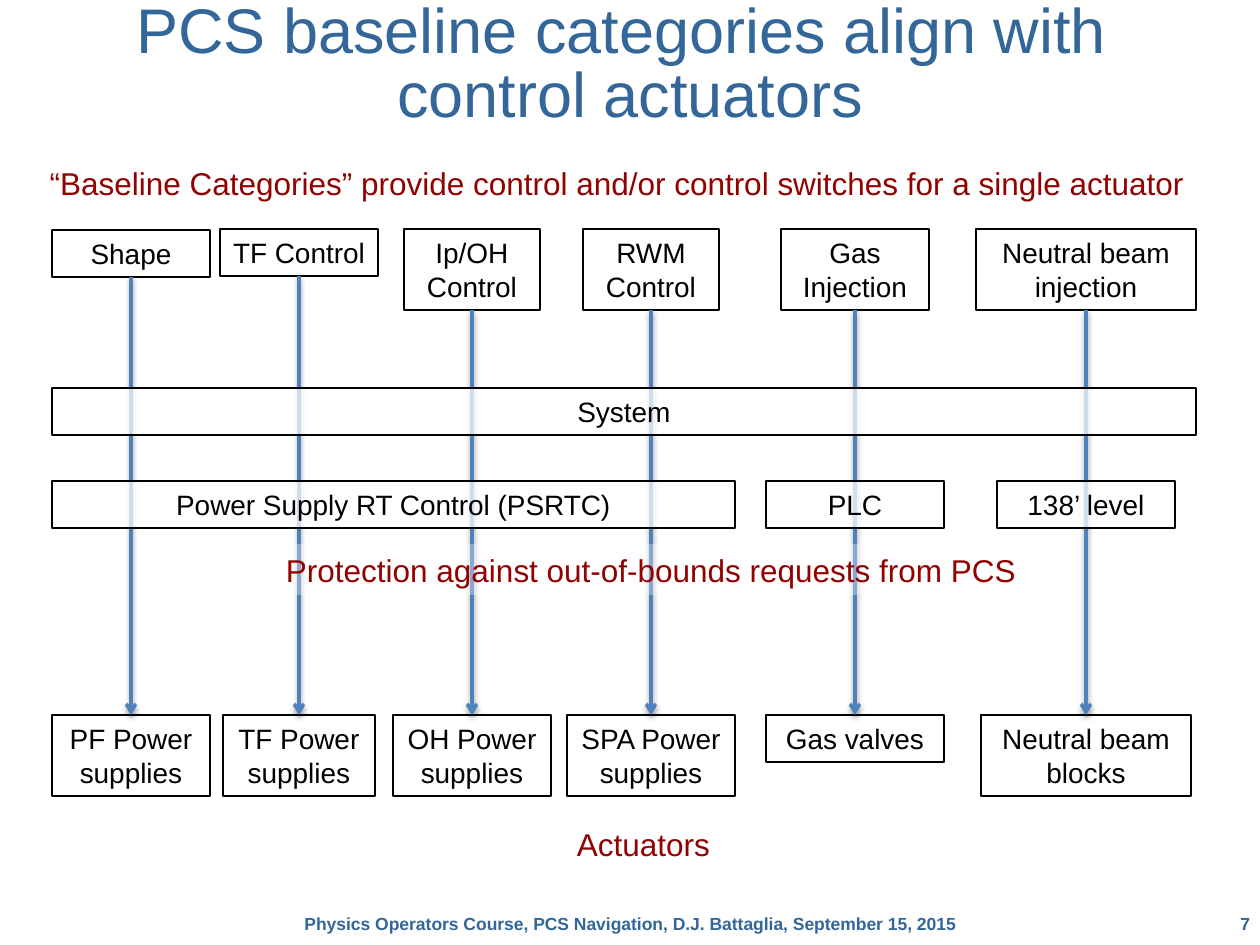
from lxml import etree
from pptx import Presentation
from pptx.dml.color import RGBColor
from pptx.enum.shapes import MSO_CONNECTOR, MSO_SHAPE
from pptx.enum.text import MSO_ANCHOR, MSO_AUTO_SIZE, PP_ALIGN
from pptx.oxml import parse_xml
from pptx.oxml.ns import qn
from pptx.util import Pt

PX = 914400 / 126
RECTANGLE = MSO_SHAPE.RECTANGLE
STRAIGHT = MSO_CONNECTOR.STRAIGHT
MIDDLE = MSO_ANCHOR.MIDDLE
NO_AUTOFIT = MSO_AUTO_SIZE.NONE
CENTER, RIGHT = PP_ALIGN.CENTER, PP_ALIGN.RIGHT
BOTTOM_SIDE, TOP_SIDE = 2, 0
COLORS = {"title": "336699", "note": "920000", "text": "000000",
          "arrow": "4F81BD", "veil": "FFFFFF"}
SHADOW = (
    '<a:effectLst xmlns:a="http://schemas.openxmlformats.org/drawingml/2006/main">'
    '<a:outerShdw blurRad="40000" dist="20000" dir="5400000" rotWithShape="0">'
    '<a:srgbClr val="000000"><a:alpha val="38000"/></a:srgbClr>'
    '</a:outerShdw></a:effectLst>'
)


def write(shape, text, size, color, align=CENTER, bold=False):
    frame = shape.text_frame
    frame.text = text
    frame.auto_size = NO_AUTOFIT
    para = frame.paragraphs[0]
    para.alignment = align
    para.font.name = "Arial"
    para.font.size = Pt(size)
    para.font.bold = bold
    para.font.color.rgb = RGBColor.from_string(COLORS[color])
    return frame


def add_box(place, text, opacity=0, size=16, color="text", outlined=True):
    box = page.shapes.add_shape(RECTANGLE, *[round(length * PX) for length in place])
    box.shadow.inherit = False
    if opacity:
        box.fill.solid()
        box.fill.fore_color.rgb = RGBColor.from_string(COLORS["veil"])
        veil = box.fill._xPr.find(qn("a:solidFill"))[0]
        etree.SubElement(veil, qn("a:alpha")).set("val", str(opacity * 1000))
    else:
        box.fill.background()
    if outlined:
        box.line.color.rgb = RGBColor.from_string(COLORS["text"])
        box.line.width = Pt(0.75)
    else:
        box.line.fill.background()
    write(box, text, size, color).word_wrap = True
    return box


deck = Presentation()
deck.slide_width = round(1260 * PX)
deck.slide_height = round(945 * PX)
page = deck.slides.add_slide(deck.slide_layouts[5])

title = page.shapes.title
title.left, title.top = 0, 0
title.width, title.height = round(1260 * PX), round(132 * PX)
frame = write(title, "PCS baseline categories align with \vcontrol actuators", 36, "title")
frame.vertical_anchor = MIDDLE
frame.margin_left = frame.margin_right = round(6 * PX)
frame.paragraphs[0].line_spacing = 0.85

SHORT, TALL = 47, 81
CATEGORY_TOP, ACTUATOR_TOP = 229, 715
columns = [
    (131, "Shape", 158, SHORT, "PF Power supplies", 158, TALL),
    (299, "TF Control", 158, SHORT, "TF Power supplies", 152, TALL),
    (472, "Ip/OH Control", 136, TALL, "OH Power supplies", 158, TALL),
    (651, "RWM Control", 136, TALL, "SPA Power supplies", 168, TALL),
    (855, "Gas Injection", 148, TALL, "Gas valves", 178, SHORT),
    (1086, "Neutral beam injection", 220, TALL, "Neutral beam blocks", 210, TALL),
]
for center, category, width, height, actuator, base_width, base_height in columns:
    top = CATEGORY_TOP + (category == "Shape")
    upper = add_box((center - width // 2, top, width, height), category)
    lower = add_box((center - base_width // 2, ACTUATOR_TOP, base_width, base_height), actuator)
    arrow = page.shapes.add_connector(STRAIGHT, 0, 0, 0, 0)
    arrow.begin_connect(upper, BOTTOM_SIDE)
    arrow.end_connect(lower, TOP_SIDE)
    arrow.line.color.rgb = RGBColor.from_string(COLORS["arrow"])
    arrow.line.width = Pt(2)
    etree.SubElement(arrow.line._get_or_add_ln(), qn("a:tailEnd")).set("type", "arrow")
    arrow._element.spPr.append(parse_xml(SHADOW))

bars = [
    (52, 388, 1144, "System", 73),
    (52, 481, 683, "Power Supply RT Control (PSRTC)", 73),
    (766, 481, 178, "PLC", 75),
    (997, 481, 178, "138’ level", 74),
]
for left, top, width, text, opacity in bars:
    add_box((left, top, width, SHORT), text, opacity)
add_box((231, 544, 840, 51), "Protection against out-of-bounds requests from PCS",
        32, 18, "note", False)

labels = [
    (32, 158, 1170, 51, "“Baseline Categories” provide control and/or control switches "
     "for a single actuator", 18, "note", CENTER, False, 13),
    (563, 819, 161, 51, "Actuators", 18, "note", CENTER, False, 13),
    (126, 907, 1008, 34, "Physics Operators Course, PCS Navigation, D.J. Battaglia, "
     "September 15, 2015", 10, "title", CENTER, True, 0),
    (1166, 907, 84, 34, "7", 10, "title", RIGHT, True, 0),
]
for left, top, width, height, text, size, color, align, bold, inset in labels:
    label = page.shapes.add_textbox(*[round(n * PX) for n in (left, top, width, height)])
    frame = write(label, text, size, color, align, bold)
    frame.word_wrap = inset == 0
    frame.margin_left = frame.margin_right = round(inset * PX)

deck.save("out.pptx")
